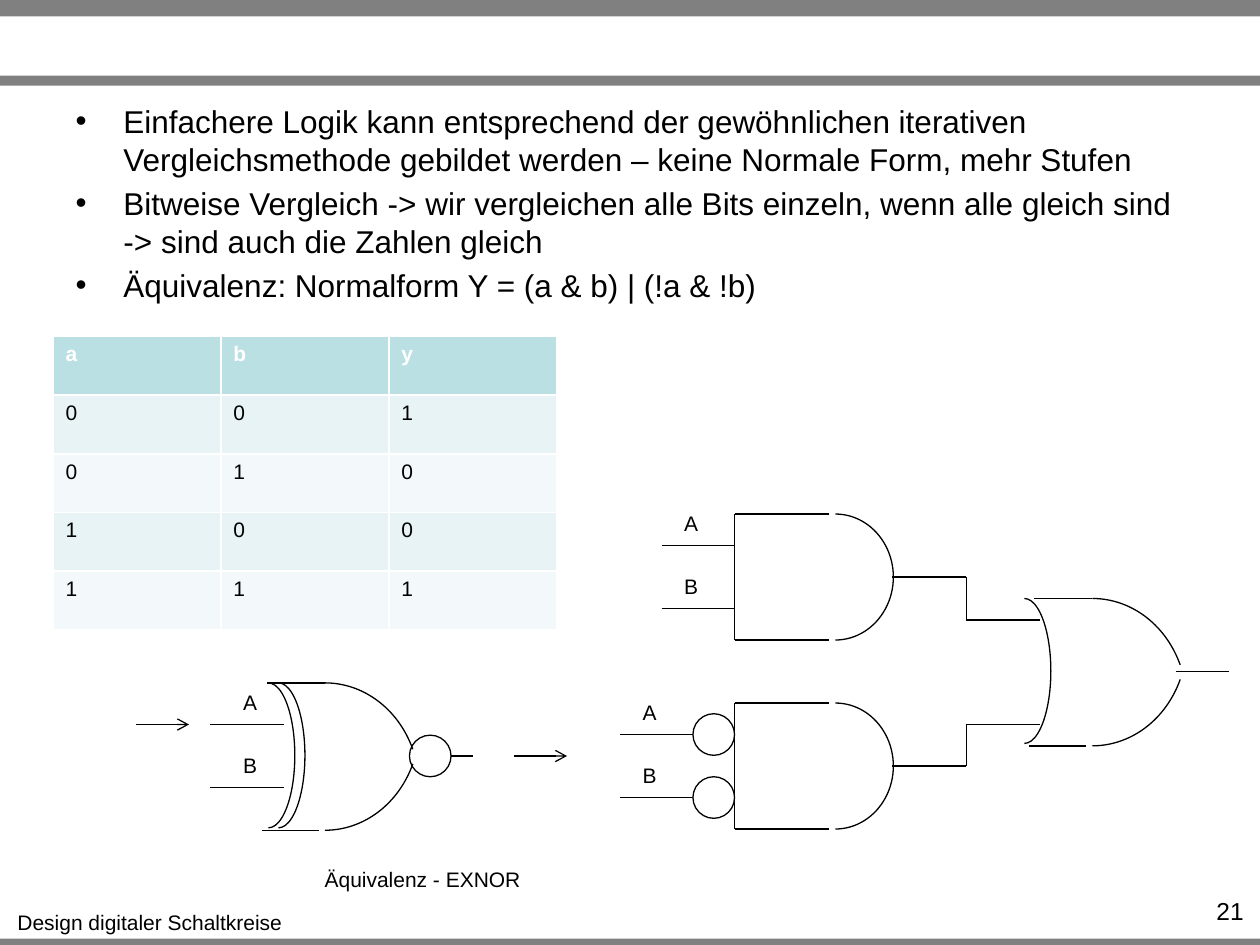
from dataclasses import dataclass

from lxml import etree
from pptx import Presentation
from pptx.dml.color import RGBColor
from pptx.enum.shapes import MSO_CONNECTOR, MSO_SHAPE
from pptx.enum.text import MSO_ANCHOR, MSO_AUTO_SIZE, PP_ALIGN
from pptx.oxml.ns import qn
from pptx.util import Inches, Pt

STRAIGHT = MSO_CONNECTOR.STRAIGHT
ARC, OVAL, RECT = MSO_SHAPE.ARC, MSO_SHAPE.OVAL, MSO_SHAPE.RECTANGLE
LEFT, CENTER, RIGHT = PP_ALIGN.LEFT, PP_ALIGN.CENTER, PP_ALIGN.RIGHT

# Arc start and end angles, in the adjustment units of the preset shape
HALF_ROUND = (162, 54)
UPPER_NOSE = (162, 201.69)
LOWER_NOSE = (14.31, 54)


@dataclass(frozen=True)
class Theme:
    font: str = "Arial"
    ink: RGBColor = RGBColor(0, 0, 0)
    paper: RGBColor = RGBColor(255, 255, 255)
    bar: RGBColor = RGBColor(0x80, 0x80, 0x80)
    header: RGBColor = RGBColor(0xBB, 0xE0, 0xE3)
    odd_row: RGBColor = RGBColor(0xE7, 0xF3, 0xF4)
    even_row: RGBColor = RGBColor(0xF3, 0xF9, 0xFA)
    body_size: Pt = Pt(18)
    number_size: Pt = Pt(14)
    small_size: Pt = Pt(12)
    wire: Pt = Pt(0.75)


THEME = Theme()

BULLETS = [
    "Einfachere Logik kann entsprechend der gewöhnlichen iterativen "
    "Vergleichsmethode gebildet werden – keine Normale Form, mehr Stufen",
    "Bitweise Vergleich -> wir vergleichen alle Bits einzeln, "
    "wenn alle gleich sind -> sind auch die Zahlen gleich",
    "Äquivalenz: Normalform Y = (a & b) | (!a & !b)",
]
TRUTH_TABLE = ["aby", "001", "010", "100", "111"]


def box_of(*lengths):
    return [Inches(length) for length in lengths]


def style(para, size, align, color=THEME.ink, bold=False):
    para.alignment = align
    para.font.name = THEME.font
    para.font.size = size
    para.font.color.rgb = color
    para.font.bold = bold


def add_text(page, box, text, size=THEME.small_size, align=CENTER, wrap=False):
    frame = page.shapes.add_textbox(*box_of(*box)).text_frame
    frame.word_wrap = wrap
    frame.text = text
    style(frame.paragraphs[0], size, align)


def add_wire(page, start, end, arrow=False):
    wire = page.shapes.add_connector(STRAIGHT, *box_of(*start, *end))
    wire.line.color.rgb = THEME.ink
    wire.line.width = THEME.wire
    if arrow:
        etree.SubElement(wire.line._get_or_add_ln(), qn("a:tailEnd"), type="arrow")
    etree.SubElement(wire._element.spPr, qn("a:effectLst"))


def add_outline(page, preset, box, angles=()):
    shape = page.shapes.add_shape(preset, *box_of(*box))
    shape.shadow.inherit = False
    for index, angle in enumerate(angles):
        shape.adjustments[index] = angle
    if preset == ARC:
        shape.fill.background()
    else:
        shape.fill.solid()
        shape.fill.fore_color.rgb = THEME.paper
    shape.line.color.rgb = THEME.ink
    shape.line.width = THEME.wire


def add_bubble(page, left, middle):
    add_outline(page, OVAL, (left, middle - 0.165, 0.33, 0.33))


def add_frame(page):
    """Grey bars, footer and page number."""
    for top, height in ((7.45, 0.08), (0, 0.13), (0.6, 0.08)):
        bar = page.shapes.add_shape(RECT, *box_of(0, top, 10, height))
        bar.shadow.inherit = False
        bar.fill.solid()
        bar.fill.fore_color.rgb = THEME.bar
        bar.line.fill.background()
    add_text(page, (0.03, 7.17, 2.32, 0.3), "Design digitaler Schaltkreise")
    add_text(page, (9.1, 7.06, 0.87, 0.24), "21", THEME.number_size, RIGHT, True)


def add_bullets(page, box):
    body = page.placeholders[1]
    body.left, body.top, body.width, body.height = box_of(*box)
    frame = body.text_frame
    frame.auto_size = MSO_AUTO_SIZE.NONE
    frame.vertical_anchor = MSO_ANCHOR.TOP
    frame.text = "\n".join(BULLETS)
    for index, para in enumerate(frame.paragraphs):
        properties = para._p.get_or_add_pPr()
        properties.set("marL", str(Inches(0.38)))
        properties.set("indent", str(Inches(-0.38)))
        etree.SubElement(properties, qn("a:buChar"), char="•")
        para.space_before = Pt(3.6 if index else 0)
        style(para, THEME.body_size, LEFT)


def add_truth_table(page, box):
    rows, columns = len(TRUTH_TABLE), len(TRUTH_TABLE[0])
    table = page.shapes.add_table(rows, columns, *box_of(*box)).table
    for row, values in enumerate(TRUTH_TABLE):
        is_header = row == 0
        fill = THEME.odd_row if row % 2 else THEME.even_row
        for column, value in enumerate(values):
            cell = table.cell(row, column)
            cell.text = value
            cell.fill.solid()
            cell.fill.fore_color.rgb = THEME.header if is_header else fill
            style(cell.text_frame.paragraphs[0], THEME.small_size, LEFT,
                  THEME.paper if is_header else THEME.ink, is_header)


def add_inputs(page, left, top, label_gap=0.08):
    """Input wires A and B, half an inch apart."""
    for index, name in enumerate("AB"):
        middle = top + 0.5 * index
        add_wire(page, (left, middle), (left + 0.58, middle))
        add_text(page, (left + label_gap, middle - 0.33, 0.31, 0.3), name)


def add_and_gate(page, left, top, inverted=False):
    """AND gate with its inputs and its output wire."""
    bottom, middle = top + 1, top + 0.5
    add_wire(page, (left, top), (left, bottom))
    for edge in (top, bottom):
        add_wire(page, (left, edge), (left + 0.75, edge))
    add_outline(page, ARC, (left + 0.34, top, 0.92, 1), HALF_ROUND)
    add_inputs(page, left - (0.91 if inverted else 0.58), top + 0.25)
    if inverted:
        for offset in (0.25, 0.75):
            add_bubble(page, left - 0.33, top + offset)
    add_wire(page, (left + 1.25, middle), (left + 1.84, middle))


def add_or_body(page, left, top, back_offsets):
    """Curved gate outline with one back curve for each offset."""
    for offset in back_offsets:
        add_outline(page, ARC, (left + offset, top, 0.42, 1.15), HALF_ROUND)
    add_outline(page, ARC, (left, top, 1.5, 1.67), UPPER_NOSE)
    add_outline(page, ARC, (left, top - 0.5, 1.5, 1.67), LOWER_NOSE)
    add_wire(page, (left + 0.29, top), (left + 0.75, top))
    add_wire(page, (left + 0.25, top + 1.17), (left + 0.7, top + 1.17))


def add_exnor(page, left, top):
    """EXNOR symbol with arrows before and after it."""
    middle = top + 0.58
    add_wire(page, (left - 0.75, top + 0.33), (left - 0.33, top + 0.33), arrow=True)
    add_inputs(page, left - 0.16, top + 0.33, 0.16)
    add_bubble(page, left + 1.42, middle)
    add_or_body(page, left, top, (0.09, 0.17))
    add_wire(page, (left + 1.75, middle), (left + 1.92, middle))
    add_wire(page, (left + 2.25, middle), (left + 2.67, middle), arrow=True)
    add_text(page, (left + 0.64, top + 1.41, 1.77, 0.3), "Äquivalenz - EXNOR")


def add_normal_form(page, left, top):
    """Two AND gates joined by an OR gate."""
    add_and_gate(page, left, top)
    add_and_gate(page, left, top + 1.5, inverted=True)
    add_or_body(page, left + 2.09, top + 0.67, (0,))
    turn = left + 1.84
    for gate_out, or_in in ((0.5, 0.84), (2, 1.67)):
        add_wire(page, (turn, top + gate_out), (turn, top + or_in))
        add_wire(page, (turn, top + or_in), (turn + 0.58, top + or_in))
    add_wire(page, (left + 3.5, top + 1.25), (left + 3.92, top + 1.25))


def main():
    deck = Presentation()
    deck.slide_width, deck.slide_height = box_of(10, 7.5)
    page = deck.slides.add_slide(deck.slide_layouts[1])
    empty_title = page.shapes.title._element
    empty_title.getparent().remove(empty_title)
    add_frame(page)
    add_bullets(page, (0.5, 0.76, 9, 2.16))
    add_truth_table(page, (0.42, 2.67, 4, 2.33))
    add_exnor(page, 1.83, 5.42)
    add_normal_form(page, 5.83, 4.08)
    deck.save("out.pptx")


if __name__ == "__main__":
    main()
